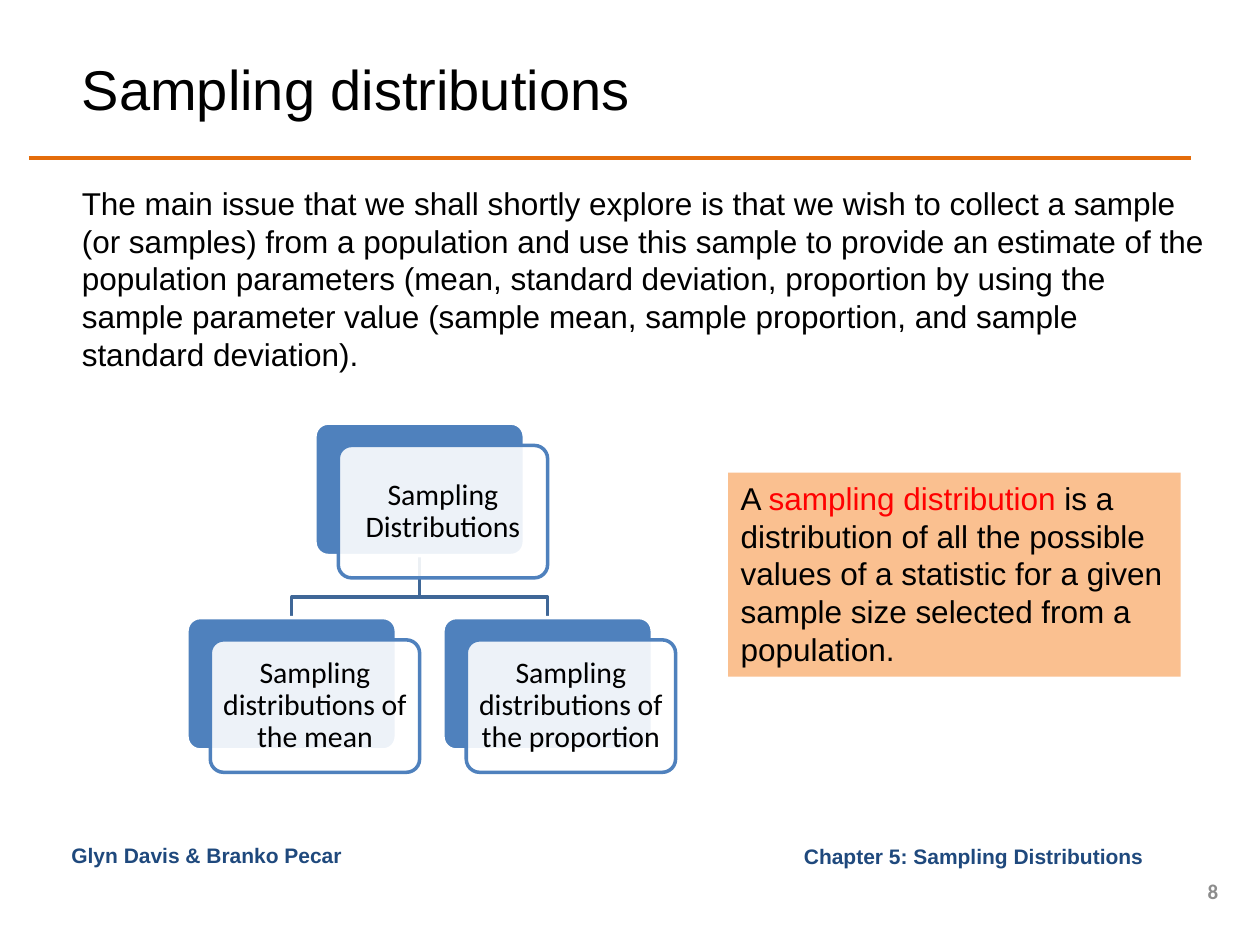
"""Build the slide on sampling distributions."""
from dataclasses import dataclass

from pptx import Presentation
from pptx.dml.color import RGBColor
from pptx.enum.shapes import MSO_CONNECTOR, MSO_SHAPE
from pptx.enum.text import MSO_ANCHOR, PP_ALIGN
from pptx.oxml.ns import qn
from pptx.util import Cm, Pt
from lxml import etree

LEFT, CENTER, RIGHT = PP_ALIGN.LEFT, PP_ALIGN.CENTER, PP_ALIGN.RIGHT
TOP, MIDDLE = MSO_ANCHOR.TOP, MSO_ANCHOR.MIDDLE
STRAIGHT = MSO_CONNECTOR.STRAIGHT
RECTANGLE, ROUNDED = MSO_SHAPE.RECTANGLE, MSO_SHAPE.ROUNDED_RECTANGLE

COLORS = {
    "black": "000000",
    "white": "FFFFFF",
    "red": "FF0000",
    "rule": "E46C0A",
    "footer": "1F497D",
    "number": "8C8C8C",
    "card": "4F81BD",
    "branch": "3F6797",
    "definition": "FAC090",
}
CARD_WIDTH, CARD_HEIGHT = 4.22, 2.67
FRONT_DX, FRONT_DY = 0.47, 0.45
ROOT_LEFT, ROOT_TOP = 6.35, 8.53
CHILD_DX, CHILD_TOP = 2.58, 12.45
BRANCH_BEND = 12.04


@dataclass(frozen=True)
class Box:
    left: float
    top: float
    width: float
    height: float

    def lengths(self) -> tuple:
        return Cm(self.left), Cm(self.top), Cm(self.width), Cm(self.height)


@dataclass(frozen=True)
class Card:
    label: str
    left: float
    top: float

    @property
    def middle(self) -> float:
        return self.left + CARD_WIDTH / 2


ROOT = Card("Sampling Distributions", ROOT_LEFT, ROOT_TOP)
CHILDREN = [
    Card("Sampling distributions of the mean", ROOT_LEFT - CHILD_DX, CHILD_TOP),
    Card("Sampling distributions of the proportion", ROOT_LEFT + CHILD_DX, CHILD_TOP),
]


def rgb(name: str) -> RGBColor:
    return RGBColor.from_string(COLORS[name])


def write(shape, *runs: tuple[str, str], size: int = 18, font: str = "Arial",
          bold: bool = False, align=LEFT, anchor=TOP, spacing: float = 1.0,
          margin: float | None = None) -> None:
    frame = shape.text_frame
    frame.word_wrap = True
    frame.vertical_anchor = anchor
    if margin is not None:
        frame.margin_left = frame.margin_right = Cm(margin)
        frame.margin_top = frame.margin_bottom = Cm(margin)
    paragraph = frame.paragraphs[0]
    paragraph.alignment = align
    paragraph.line_spacing = spacing
    for words, color in runs:
        run = paragraph.add_run()
        run.text = words
        run.font.name = font
        run.font.size = Pt(size)
        run.font.bold = bold
        run.font.color.rgb = rgb(color)


def add_text(slide, box: Box, words: str, color: str = "black", **text_format) -> None:
    write(slide.shapes.add_textbox(*box.lengths()), (words, color), **text_format)


def add_panel(slide, kind, box: Box, fill: str, line: str | None = None):
    panel = slide.shapes.add_shape(kind, *box.lengths())
    panel.shadow.inherit = False
    panel.fill.solid()
    panel.fill.fore_color.rgb = rgb(fill)
    if line:
        panel.line.color.rgb = rgb(line)
        panel.line.width = Pt(2)
    else:
        panel.line.fill.background()
    return panel


def add_rule(slide, left: float, right: float, y: float) -> None:
    rule = slide.shapes.add_connector(STRAIGHT, Cm(left), Cm(y), Cm(right), Cm(y))
    rule.line.color.rgb = rgb("rule")
    rule.line.width = Pt(2)
    etree.SubElement(rule._element.spPr, qn("a:effectLst"))


def add_branch(slide, parent: Card, child: Card) -> None:
    start, end = Cm(parent.middle), Cm(child.middle)
    builder = slide.shapes.build_freeform(start, Cm(parent.top + CARD_HEIGHT))
    bends = [(start, Cm(BRANCH_BEND)), (end, Cm(BRANCH_BEND)), (end, Cm(child.top))]
    builder.add_line_segments(bends, close=False)
    branch = builder.convert_to_shape()
    branch.shadow.inherit = False
    branch.fill.background()
    branch.line.color.rgb = rgb("branch")
    branch.line.width = Pt(2)


def add_card(slide, card: Card) -> None:
    back_box = Box(card.left, card.top, CARD_WIDTH, CARD_HEIGHT)
    front_box = Box(card.left + FRONT_DX, card.top + FRONT_DY, CARD_WIDTH, CARD_HEIGHT)
    back = add_panel(slide, ROUNDED, back_box, "card", "white")
    front = add_panel(slide, ROUNDED, front_box, "white", "card")
    for panel in (back, front):
        panel.adjustments[0] = 0.1
    tint = front._element.spPr.find(qn("a:solidFill")).find(qn("a:srgbClr"))
    etree.SubElement(tint, qn("a:alpha"), val="90000")
    write(front, (card.label, "black"), size=17, font="Calibri", align=CENTER,
          anchor=MIDDLE, spacing=0.9, margin=0.18)


def main() -> None:
    presentation = Presentation()
    presentation.slide_width, presentation.slide_height = Cm(25.4), Cm(19.05)
    slide = presentation.slides.add_slide(presentation.slide_layouts[6])

    add_rule(slide, 0.58, 24, 3.18)
    add_text(slide, Box(1.4, 0.79, 19.25, 1.98), "Sampling distributions",
             size=32, anchor=MIDDLE)
    add_text(slide, Box(1.4, 3.58, 23.22, 4.11),
             "The main issue that we shall shortly explore is that we wish to collect "
             "a sample (or samples) from a population and use this sample to provide "
             "an estimate of the population parameters (mean, standard deviation, "
             "proportion by using the sample parameter value (sample mean, sample "
             "proportion, and sample standard deviation).")

    for child in CHILDREN:
        add_branch(slide, ROOT, child)
    for card in (ROOT, *CHILDREN):
        add_card(slide, card)

    definition = add_panel(slide, RECTANGLE, Box(14.68, 9.53, 9.12, 4.11), "definition")
    write(definition, ("A ", "black"), ("sampling distribution", "red"),
          (" is a distribution of all the possible values of a statistic for a given "
           "sample size selected from a population.", "black"))

    add_text(slide, Box(1.19, 16.87, 7.54, 0.79), "Glyn Davis & Branko Pecar",
             "footer", size=12, bold=True)
    add_text(slide, Box(11.13, 16.87, 12.17, 0.79),
             "Chapter 5: Sampling Distributions", "footer", size=12, bold=True,
             align=RIGHT, anchor=MIDDLE)
    add_text(slide, Box(23.62, 17.65, 1.19, 0.61), "8", "number", size=12,
             font="Calibri", bold=True, align=RIGHT, anchor=MIDDLE)
    presentation.save("out.pptx")


if __name__ == "__main__":
    main()
